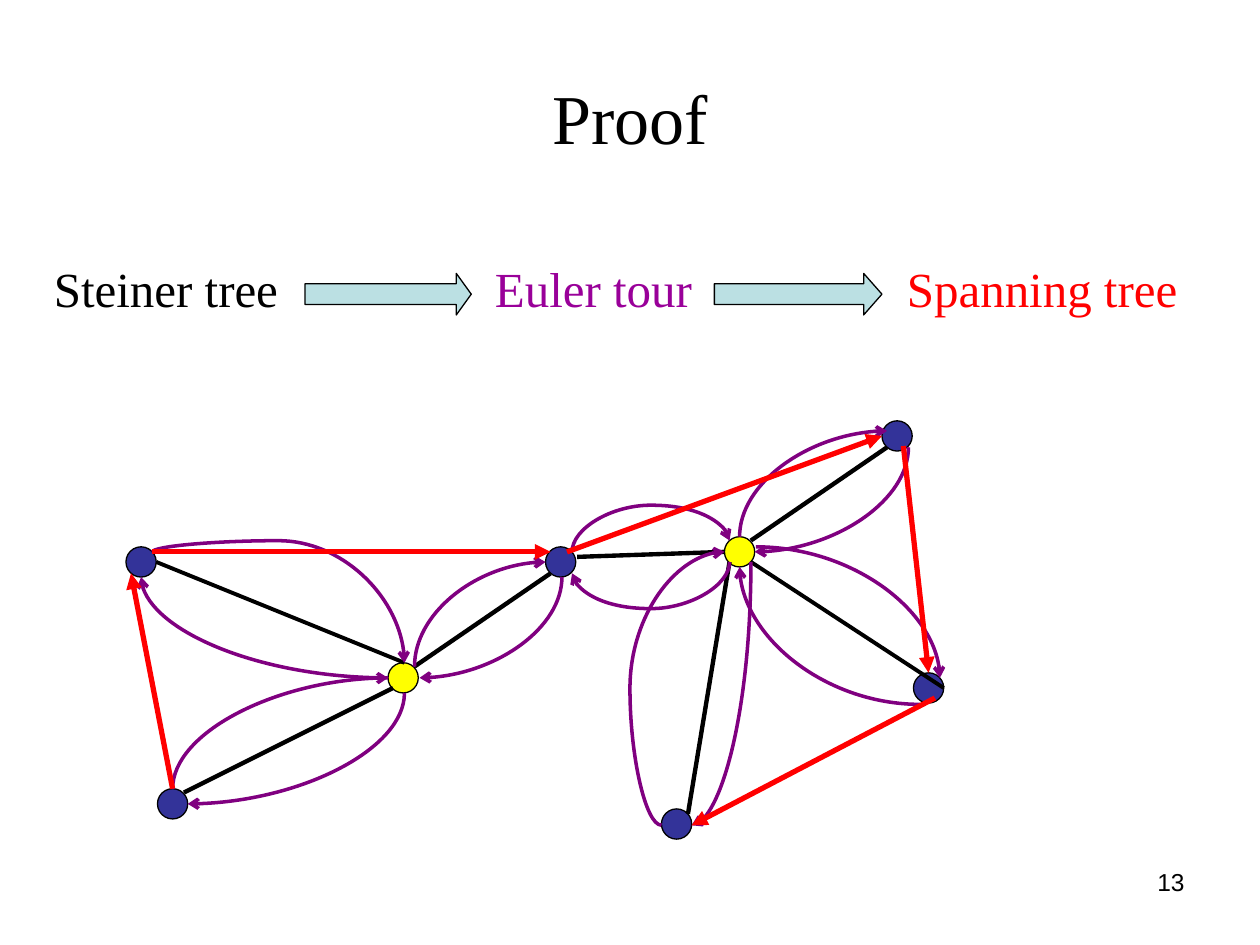
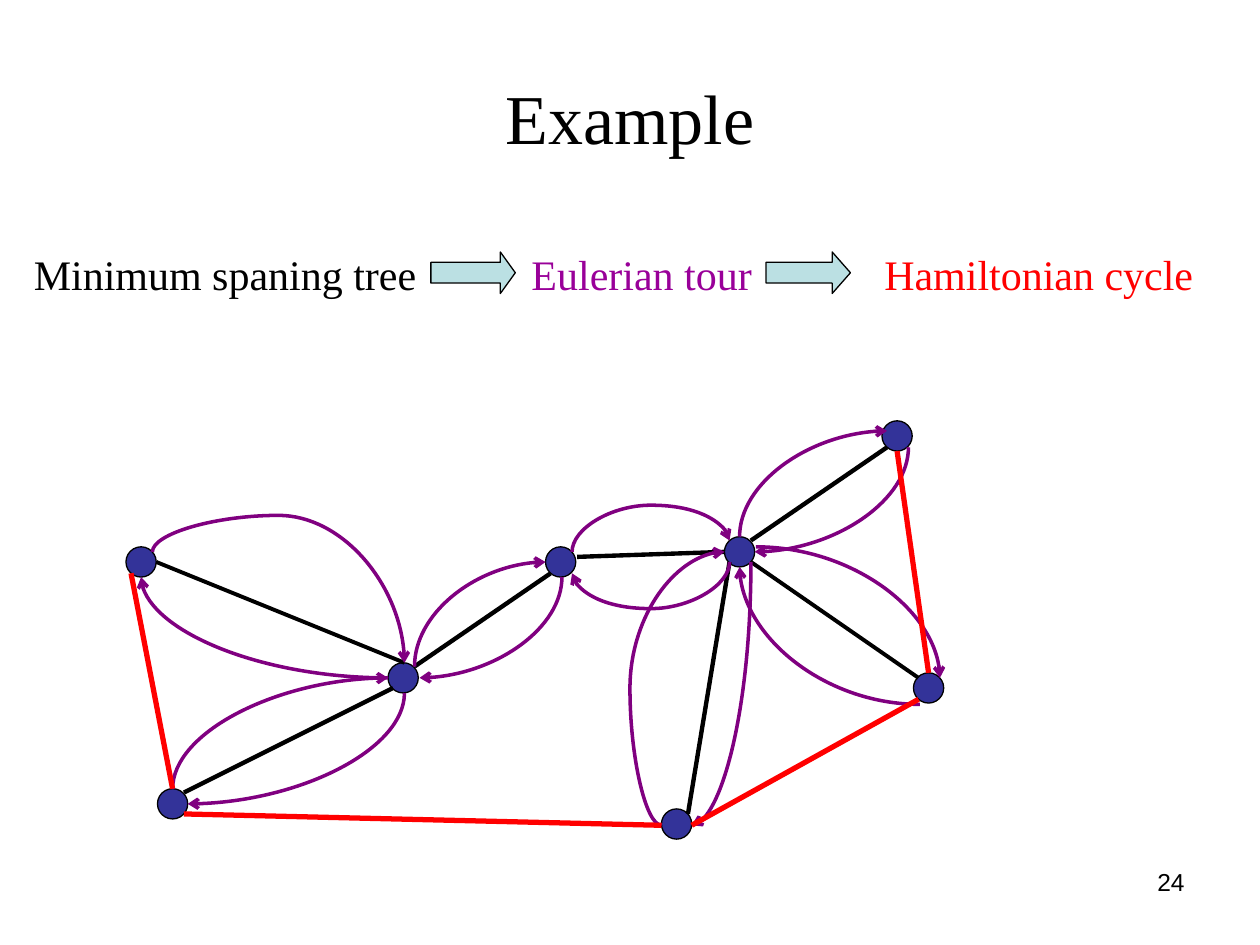
from lxml.etree import SubElement
from pptx import Presentation
from pptx.dml.color import RGBColor
from pptx.enum.shapes import MSO_CONNECTOR, MSO_SHAPE
from pptx.enum.text import MSO_ANCHOR, MSO_AUTO_SIZE, PP_ALIGN
from pptx.oxml.ns import qn
from pptx.util import Inches, Pt

COLUMNS, ROWS = 100, 75
COLORS = {
    "black": "000000", "blue": "333399", "yellow": "FFFF00", "purple": "800080",
    "violet": "990099", "red": "FF0000", "pale": "BBE0E3",
}
TITLE = {"size": Pt(40), "name": "Times New Roman"}
NUMBER = {"size": Pt(14), "name": "Arial"}
NODE_SIZE = 2.4

# Top left corners of the nodes, in grid units
TERMINALS = [(10, 43.4), (43.3, 43.4), (12.5, 62.6), (72.5, 53.4), (70, 33.4), (52.5, 64.2)]
STEINER_NODES = [(30.8, 52.6), (57.5, 42.6)]

# Start, end, width in points
TREE_EDGES = [
    ((31.2, 54.6), (14.6, 62.9), 2.5),
    ((32.1, 52.6), (12.4, 44.6), 2.25),
    ((32.9, 52.9), (43.7, 45.5), 2.5),
    ((57.9, 44.6), (54.6, 64.6), 2.5),
    ((59.6, 42.9), (70.4, 35.5), 2.5),
    ((45.8, 44.2), (57.5, 43.8), 2.5),
]
# Start, end, axis on which the arc leaves, and the turning line of an S or U arc
TOUR_ARCS = [
    ((30.8, 53.8), (11.2, 45.8), "x", None),
    ((32.1, 55), (14.9, 63.8), "y", None),
    ((13.7, 62.6), (30.8, 53.8), "y", None),
    ((32.9, 52.9), (43.3, 44.6), "y", None),
    ((45.4, 43.8), (57.9, 42.9), "y", 40.1),
    ((58.7, 42.6), (70.4, 34.2), "y", None),
    ((60, 43.4), (74.6, 53.8), "x", None),
    ((59.6, 44.6), (54.9, 65.5), "y", None),
    ((44.6, 45.8), (33.3, 53.8), "y", None),
    ((57.9, 44.6), (45.4, 45.5), "y", 48.3),
    ((52.5, 65.5), (57.5, 43.8), "x", 50),
    ((73, 55.9), (58.7, 45), "x", None),
    ((72.1, 35.5), (59.9, 43.8), "y", None),
]

SLIDES = [
    {
        "title": "Proof", "number": "13", "size": 28, "steiner": "yellow", "arrowhead": "triangle",
        "labels": [("Steiner tree", 3.3, 20, "black"), ("Euler tour", 38.3, 17.8, "violet"),
                   ("Spanning tree", 71, 23.7, "red")],
        "label_top": 20, "arrow_top": 21.7, "arrows": [(24.2, 13.2, 0.36), (56.7, 13.3, 0.44)],
        "first_bend": 42.9, "last_edge_end": (74.9, 54.6),
        "result": [((13.7, 62.6), (10.4, 45.5)), ((12.1, 43.8), (43.7, 43.8)),
                   ((45, 43.8), (70, 34.6)), ((71.7, 35.4), (73.7, 53.4)),
                   ((74.2, 55.4), (54.9, 65.5))],
    },
    {
        "title": "Example", "number": "24", "size": 24, "steiner": "blue", "arrowhead": None,
        "labels": [("Minimum spaning tree", 1.7, 32.6, "black"),
                   ("Eulerian tour", 41.2, 19.7, "violet"),
                   ("Hamiltonian cycle", 69.2, 26.7, "red")],
        "label_top": 19.2, "arrow_top": 20, "arrows": [(34.2, 6.7, 0.36), (60.8, 6.7, 0.44)],
        "first_bend": 40.9, "last_edge_end": (72.9, 53.8),
        "result": [((13.7, 62.6), (10.4, 45.5)), ((52.5, 65.5), (14.6, 64.6)),
                   ((71.2, 35.8), (73.7, 53.4)), ((72.9, 55.5), (54.9, 65.5))],
    },
]


def color(name):
    return RGBColor.from_string(COLORS[name])


def apply_format(target, values):
    for attribute, value in values.items():
        setattr(target, attribute, value)


class GraphSlides:
    def __init__(self):
        self.presentation = Presentation()
        apply_format(self.presentation, {"slide_width": Inches(10), "slide_height": Inches(7.5)})
        self.slide = None

    def new_slide(self):
        self.slide = self.presentation.slides.add_slide(self.presentation.slide_layouts[6])

    def grid(self, x, y):
        return (round(self.presentation.slide_width * x / COLUMNS),
                round(self.presentation.slide_height * y / ROWS))

    def text(self, words, place, font, align=PP_ALIGN.LEFT, color_name="black", **frame_format):
        box = self.slide.shapes.add_textbox(*self.grid(*place[:2]), *self.grid(*place[2:]))
        apply_format(box.text_frame, {"word_wrap": True, **frame_format})
        paragraph = box.text_frame.paragraphs[0]
        paragraph.alignment = align
        run = paragraph.add_run()
        run.text = words
        apply_format(run.font, font)
        run.font.color.rgb = color(color_name)

    def shape(self, kind, place, fill):
        shape = self.slide.shapes.add_shape(kind, *self.grid(*place[:2]), *self.grid(*place[2:]))
        shape.shadow.inherit = False
        shape.fill.solid()
        shape.fill.fore_color.rgb = color(fill)
        shape.line.color.rgb = color("black")
        shape.line.width = Pt(0.75)
        return shape

    def node(self, corner, fill):
        self.shape(MSO_SHAPE.OVAL, (*corner, NODE_SIZE, NODE_SIZE), fill)

    def block_arrow(self, place, head):
        arrow = self.shape(MSO_SHAPE.RIGHT_ARROW, place, "pale")
        arrow.adjustments[1] = head / 0.5 * 0.5 * place[2] / place[2]

    def line(self, start, end, color_name, width, arrowhead=None, kind=MSO_CONNECTOR.STRAIGHT):
        connector = self.slide.shapes.add_connector(kind, *self.grid(*start), *self.grid(*end))
        connector.line.color.rgb = color(color_name)
        connector.line.width = Pt(width)
        if arrowhead:
            SubElement(connector.line._get_or_add_ln(), qn("a:tailEnd"), type=arrowhead)
        SubElement(connector._element.spPr, qn("a:effectLst"))
        return connector

    def arc(self, start, end, axis, bend):
        """Draw a curved arrow: a quarter turn, or one that turns at the line `bend`."""
        (x1, y1), (x2, y2) = start, end
        dx, dy = x2 - x1, y2 - y1
        if axis == "x":
            rotation, flipped = (0, dy < 0) if dx > 0 else (180, dy > 0)
            width, height, origin, run = abs(dx), abs(dy), x1, dx
        else:
            rotation, flipped = (90, dx > 0) if dy > 0 else (270, dx < 0)
            width, height, origin, run = abs(dy), abs(dx), y1, dy
        left, top = (x1 + x2 - width) / 2, (y1 + y2 - height) / 2
        first, last = (top + height, top) if flipped else (top, top + height)
        connector = self.line((left, first), (left + width, last), "purple", 2, "arrow",
                              MSO_CONNECTOR.CURVE)
        connector.rotation = rotation
        geometry = connector._element.spPr.find(qn("a:prstGeom"))
        if bend is None:
            geometry.set("prst", "curvedConnector2")
        else:
            share = round((bend - origin) / run * 100000)
            SubElement(geometry.find(qn("a:avLst")), qn("a:gd"), name="adj1", fmla=f"val {share}")

    def graph(self, content):
        for corner in TERMINALS:
            self.node(corner, "blue")
        for corner in STEINER_NODES:
            self.node(corner, content["steiner"])
        for start, end, width in [*TREE_EDGES, ((59.6, 44.6), content["last_edge_end"], 2.25)]:
            self.line(start, end, "black", width)
        for arc in [((12.1, 43.8), (32.1, 52.6), "y", content["first_bend"]), *TOUR_ARCS]:
            self.arc(*arc)
        for start, end in content["result"]:
            self.line(start, end, "red", 3, content["arrowhead"])

    def steps(self, content):
        """Write the three stages and the block arrows between them."""
        font = {"size": Pt(content["size"]), "name": "Times New Roman"}
        for words, left, width, color_name in content["labels"]:
            self.text(words, (left, content["label_top"], width, content["size"] / 5), font,
                      color_name=color_name, word_wrap=False,
                      auto_size=MSO_AUTO_SIZE.SHAPE_TO_FIT_TEXT)
        for left, width, head in content["arrows"]:
            self.block_arrow((left, content["arrow_top"], width, 3.3), head)

    def build(self, content):
        self.new_slide()
        self.text(content["number"], (71.7, 68.3, 23.3, 5.2), NUMBER, PP_ALIGN.RIGHT)
        self.text(content["title"], (5, 3, 90, 12.5), TITLE, PP_ALIGN.CENTER,
                  vertical_anchor=MSO_ANCHOR.MIDDLE)
        self.graph(content)
        self.steps(content)


def main():
    deck = GraphSlides()
    for content in SLIDES:
        deck.build(content)
    deck.presentation.save("out.pptx")


if __name__ == "__main__":
    main()
